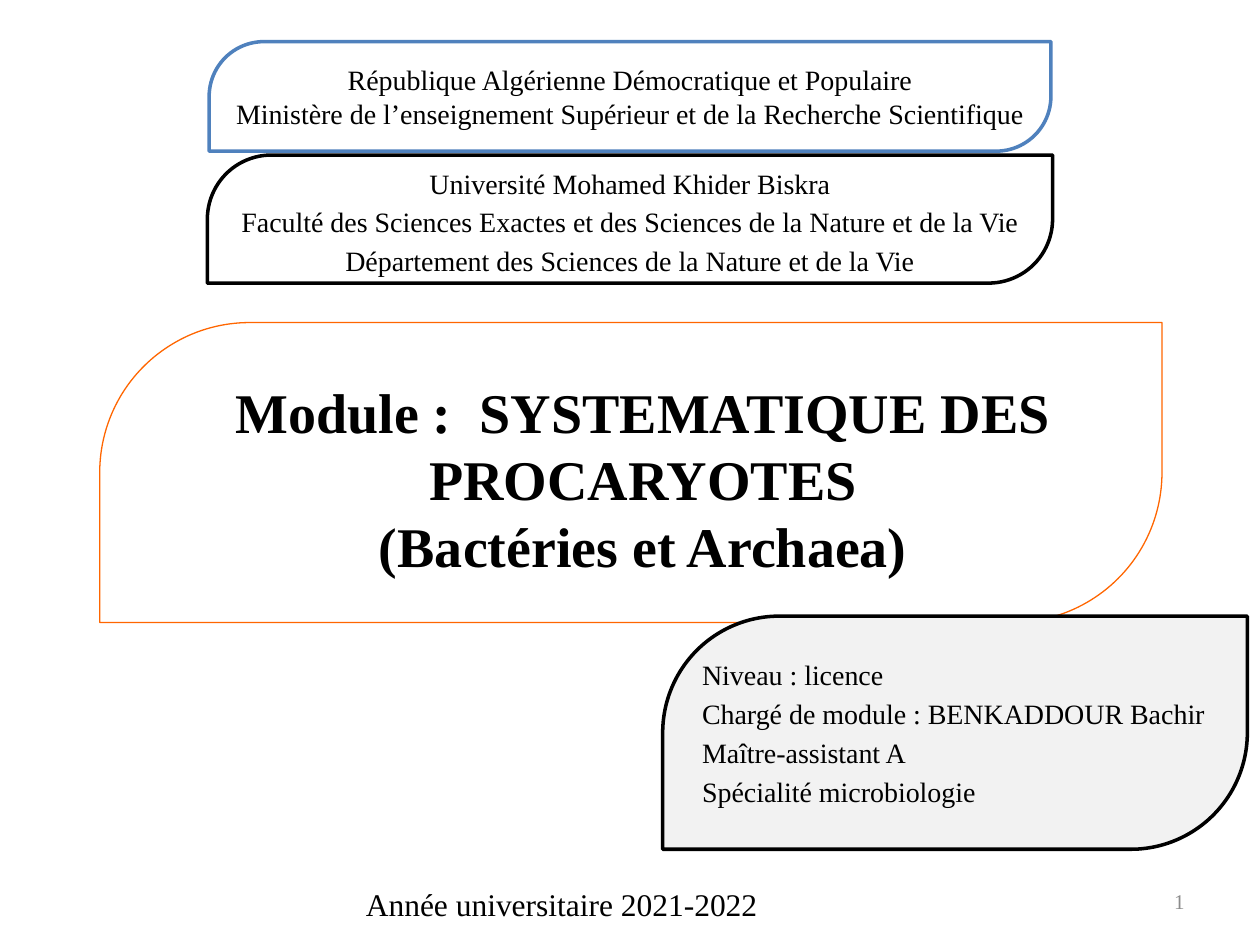
from pptx import Presentation
from pptx.dml.color import RGBColor
from pptx.enum.shapes import MSO_SHAPE as Shape
from pptx.enum.text import MSO_ANCHOR as Anchor, MSO_AUTO_SIZE as AutoSize, PP_ALIGN as Align
from pptx.util import Pt

BLACK = RGBColor(0x00, 0x00, 0x00)
WHITE = RGBColor(0xFF, 0xFF, 0xFF)
BLUE = RGBColor(0x4F, 0x81, 0xBD)
ORANGE = RGBColor(0xFF, 0x66, 0x00)
PALE_GRAY = RGBColor(0xF2, 0xF2, 0xF2)
NUMBER_GRAY = RGBColor(0x8C, 0x8C, 0x8C)


class CoverBuilder:
    font_name = "Times New Roman"
    panel_inset = 3

    def __init__(self, slide):
        self.slide = slide

    def add_lines(self, shape, lines, size, color=BLACK, bold=False, align=Align.LEFT,
                  anchor=Anchor.MIDDLE, wrap=False, inset=None, space_before=0,
                  line_spacing=None):
        frame = shape.text_frame
        frame.auto_size = AutoSize.NONE
        frame.word_wrap = wrap
        frame.vertical_anchor = anchor
        if inset is not None:
            frame.margin_left = frame.margin_right = Pt(inset)
            frame.margin_top = frame.margin_bottom = Pt(inset)
        for index, line in enumerate(lines):
            paragraph = frame.add_paragraph() if index else frame.paragraphs[0]
            paragraph.alignment = align
            paragraph.space_before = Pt(space_before if index else 0)
            if line_spacing:
                paragraph.line_spacing = line_spacing
            run = paragraph.add_run()
            run.text = line
            run.font.name = self.font_name
            run.font.size = Pt(size)
            run.font.bold = bold
            run.font.color.rgb = color

    def panel(self, box, line_color, line_width=2, fill=None, lines=(), **style):
        shape = self.slide.shapes.add_shape(Shape.ROUND_2_DIAG_RECTANGLE, *map(Pt, box))
        shape.shadow.inherit = False
        shape.adjustments[0] = 0.5
        shape.adjustments[1] = 0
        if fill is None:
            shape.fill.background()
        else:
            shape.fill.solid()
            shape.fill.fore_color.rgb = fill
        shape.line.color.rgb = line_color
        shape.line.width = Pt(line_width)
        if lines:
            self.add_lines(shape, lines, 16, inset=self.panel_inset, **style)

    def title(self, box, lines):
        title = self.slide.shapes.title
        title.left, title.top, title.width, title.height = map(Pt, box)
        self.add_lines(title, lines, 32, bold=True, align=Align.CENTER, wrap=True,
                       inset=self.panel_inset)

    def text(self, box, line, size, **style):
        shape = self.slide.shapes.add_textbox(*map(Pt, box))
        self.add_lines(shape, [line], size, **style)


def main():
    presentation = Presentation()
    presentation.slide_width = Pt(720)
    presentation.slide_height = Pt(540)
    slide = presentation.slides.add_slide(presentation.slide_layouts[5])
    cover = CoverBuilder(slide)

    cover.panel((57, 184.3, 607, 171.4), ORANGE, line_width=0.75)
    cover.title((85, 187.5, 565, 171.4),
                ["Module :  SYSTEMATIQUE DES PROCARYOTES", "(Bactéries et Archaea)"])
    cover.panel((378.7, 352.1, 334.1, 133.2), BLACK, fill=PALE_GRAY, space_before=3.2, lines=[
        "Niveau : licence",
        "Chargé de module : BENKADDOUR Bachir",
        "Maître-assistant A",
        "Spécialité microbiologie",
    ])
    cover.panel((119.5, 23.8, 481, 62.6), BLUE, fill=WHITE, align=Align.CENTER, lines=[
        "République Algérienne Démocratique et Populaire",
        "Ministère de l’enseignement Supérieur et de la Recherche Scientifique",
    ])
    cover.panel((118.5, 88.6, 483, 73.2), BLACK, fill=WHITE, align=Align.CENTER,
                line_spacing=1.15, lines=[
                    "Université Mohamed Khider Biskra",
                    "Faculté des Sciences Exactes et des Sciences de la Nature et de la Vie",
                    "Département des Sciences de la Nature et de la Vie",
                ])
    cover.text((202, 502, 240.5, 29), "Année universitaire 2021-2022", 18, anchor=Anchor.TOP)
    cover.text((516, 500.5, 168, 28.8), "1", 12, color=NUMBER_GRAY, align=Align.RIGHT, wrap=True)

    presentation.save("out.pptx")


if __name__ == "__main__":
    main()
